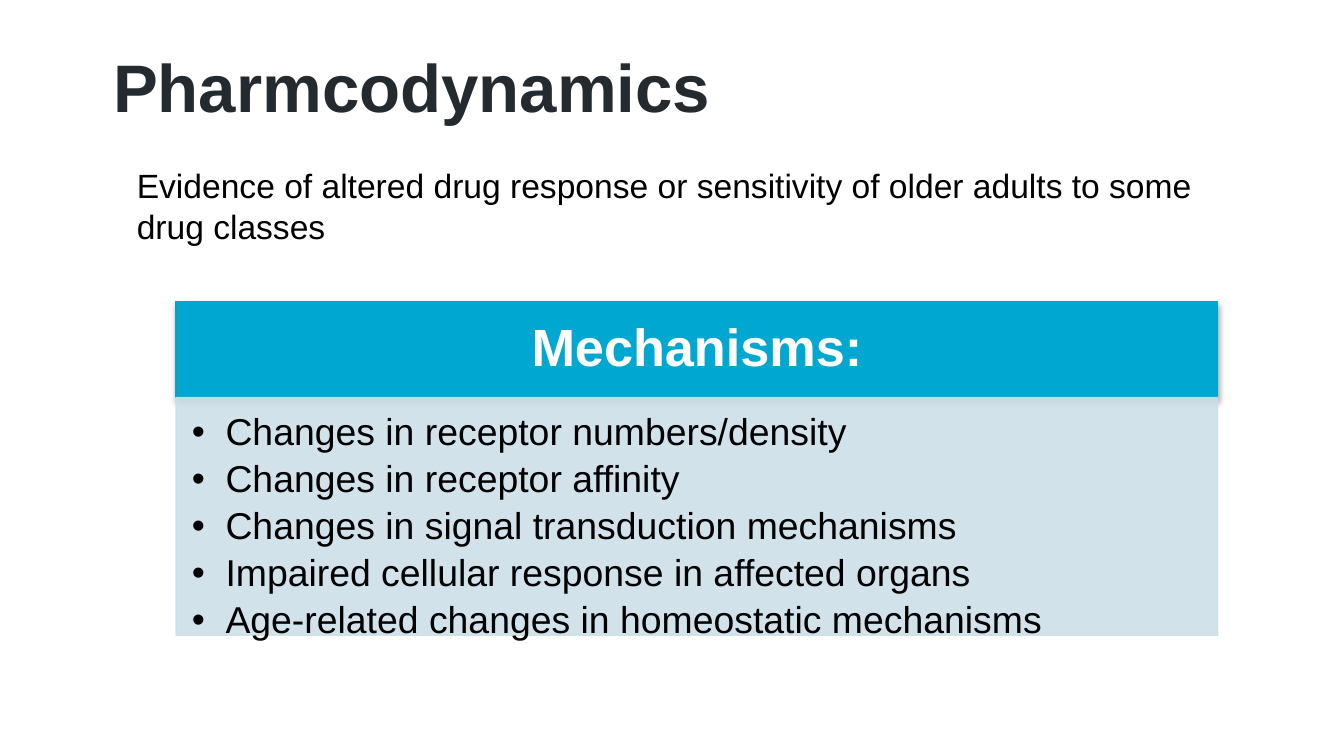
from lxml import etree
from pptx import Presentation
from pptx.dml.color import RGBColor
from pptx.enum.shapes import MSO_SHAPE as Shape
from pptx.enum.text import MSO_ANCHOR as Anchor, PP_ALIGN as Align
from pptx.oxml.ns import qn
from pptx.util import Pt

COLORS = {
    "title": "232B31",
    "text": "000000",
    "header": "00A8D1",
    "header_line": "129DBF",
    "header_text": "FFFFFF",
    "panel": "CCDFE8",
    "shadow": "000000",
}
MECHANISMS = [
    "Changes in receptor numbers/density",
    "Changes in receptor affinity",
    "Changes in signal transduction mechanisms",
    "Impaired cellular response in affected organs",
    "Age-related changes in homeostatic mechanisms",
]


def color(name):
    """Return the named colour."""
    return RGBColor.from_string(COLORS[name])


def set_frame(box, insets, anchor=Anchor.TOP):
    """Set wrapping, insets (left, top, right, bottom) and anchor."""
    frame = box.text_frame
    frame.word_wrap = True
    frame.vertical_anchor = anchor
    frame.margin_left, frame.margin_top, frame.margin_right, frame.margin_bottom = map(Pt, insets)
    return frame


def write(para, text, size, tint, bold=False, align=Align.LEFT, spacing=0.9):
    """Fill a paragraph and format its run."""
    para.text = text
    para.alignment = align
    para.line_spacing = spacing
    span = para.runs[0]
    span.font.name = "Arial"
    span.font.size = Pt(size)
    span.font.bold = bold
    span.font.color.rgb = color(tint)


def add_text(page, box, text, size, tint, insets, anchor=Anchor.TOP, bold=False, spacing=0.9):
    """Add a text box with one paragraph."""
    label = page.shapes.add_textbox(*map(Pt, box))
    frame = set_frame(label, insets, anchor)
    write(frame.paragraphs[0], text, size, tint, bold, spacing=spacing)


def add_block(page, box, fill, line):
    """Add a filled rectangle with a thin outline."""
    block = page.shapes.add_shape(Shape.RECTANGLE, *map(Pt, box))
    block.shadow.inherit = False
    block.fill.solid()
    block.fill.fore_color.rgb = color(fill)
    block.line.color.rgb = color(line)
    block.line.width = Pt(0.75)
    return block


def set_alpha(tint, percent):
    """Give a colour element an opacity."""
    etree.SubElement(tint, qn("a:alpha"), val=str(percent * 1000))


def add_shadow(block):
    """Give a block a soft shadow below it."""
    effects = block._element.spPr.find(qn("a:effectLst"))
    shadow = etree.SubElement(effects, qn("a:outerShdw"), blurRad=str(Pt(3.1)),
                              dist=str(Pt(1.8)), dir="5400000", rotWithShape="0")
    set_alpha(etree.SubElement(shadow, qn("a:srgbClr"), val=COLORS["shadow"]), 35)


def add_bullet(para, indent):
    """Give a paragraph a round bullet with a hanging indent."""
    props = para._p.get_or_add_pPr()
    props.set("marL", str(Pt(indent)))
    props.set("indent", str(-Pt(indent)))
    etree.SubElement(props, qn("a:buFont"), typeface="Arial")
    etree.SubElement(props, qn("a:buChar"), char="•")


def add_mechanisms(page, box, heading, items):
    """Add a headed panel with a bulleted list."""
    left, top, width, height = box
    header_height = 51.3
    header = add_block(page, (left, top, width, header_height), "header", "header_line")
    add_shadow(header)
    frame = set_frame(header, (16, 9, 16, 9), Anchor.MIDDLE)
    write(frame.paragraphs[0], heading, 28, "header_text", True, Align.CENTER)

    panel = add_block(page, (left, top + header_height, width, height - header_height),
                      "panel", "panel")
    for tint in panel._element.spPr.iter(qn("a:srgbClr")):
        set_alpha(tint, 90)
    frame = set_frame(panel, (8.5, 8.5, 11.5, 12))
    for index, item in enumerate(items):
        para = frame.paragraphs[0] if index == 0 else frame.add_paragraph()
        add_bullet(para, 18)
        write(para, item, 20, "text")
        para.space_after = Pt(3.6)


def main():
    """Build and save the slide."""
    deck = Presentation()
    deck.slide_width, deck.slide_height = Pt(720), Pt(405)
    page = deck.slides.add_slide(deck.slide_layouts[6])
    add_text(page, (53.5, 12, 640, 73), "Pharmcodynamics", 36, "title",
             (7.2, 0, 7.2, 0), Anchor.MIDDLE, True)
    add_mechanisms(page, (94.3, 161.7, 558, 178.7), "Mechanisms:", MECHANISMS)
    add_text(page, (66.2, 85, 605, 51),
             "Evidence of altered drug response or sensitivity of older adults to some drug classes",
             18, "text", (7.2, 3.6, 7.2, 3.6), spacing=1.0)
    deck.save("out.pptx")


if __name__ == "__main__":
    main()
